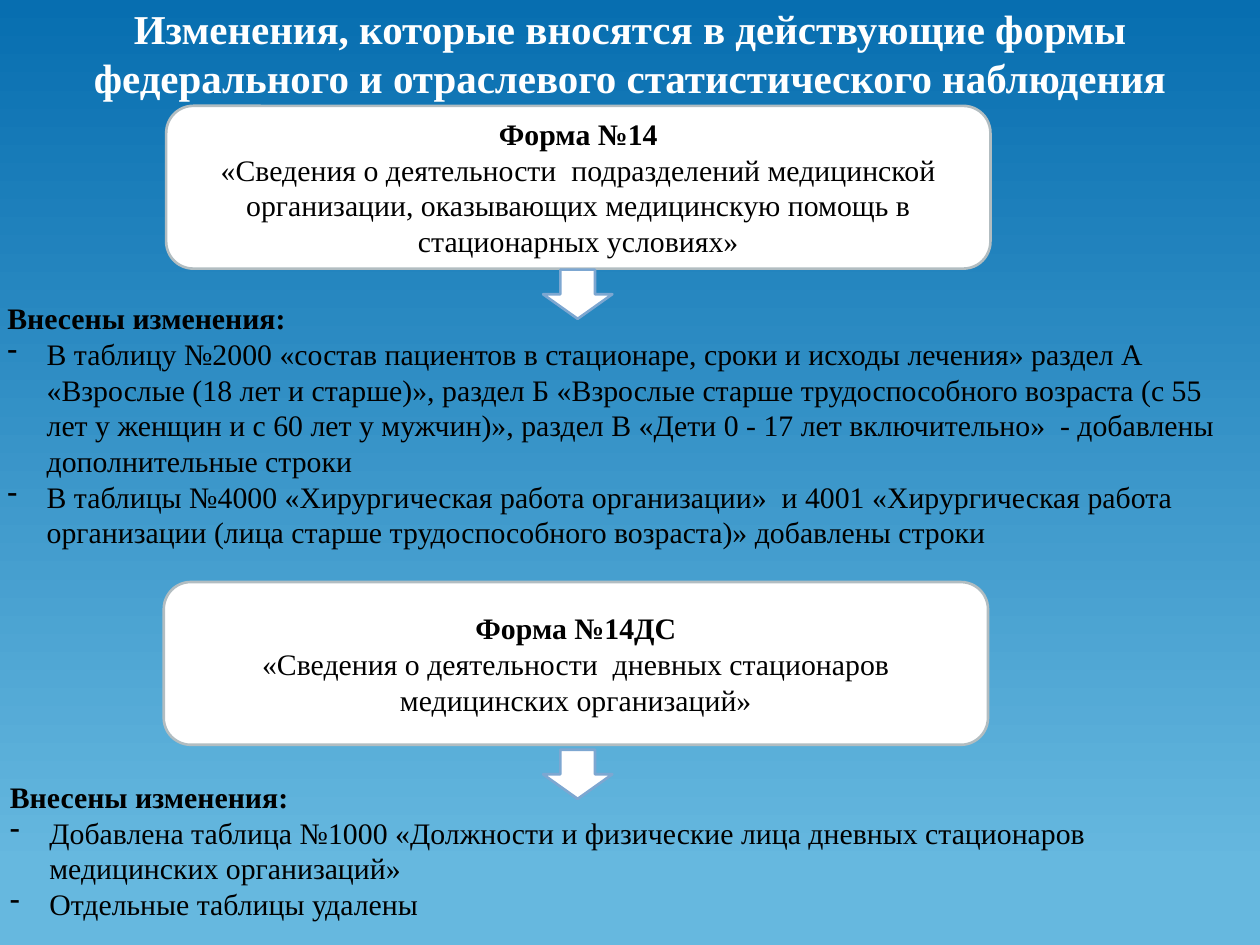
from lxml import etree
from pptx import Presentation
from pptx.dml.color import RGBColor
from pptx.enum.shapes import MSO_SHAPE
from pptx.enum.text import MSO_ANCHOR, PP_ALIGN
from pptx.oxml.ns import qn
from pptx.util import Pt

ROUNDED, DOWN_ARROW = MSO_SHAPE.ROUNDED_RECTANGLE, MSO_SHAPE.DOWN_ARROW
MIDDLE = MSO_ANCHOR.MIDDLE
CENTER, LEFT = PP_ALIGN.CENTER, PP_ALIGN.LEFT

WHITE = RGBColor(0xFF, 0xFF, 0xFF)
BLACK = RGBColor(0, 0, 0)
SKY_TOP = RGBColor(0x07, 0x6E, 0xB0)
SKY_BOTTOM = RGBColor(0x66, 0xB8, 0xDF)
BOX_EDGE = RGBColor(0xB2, 0xBD, 0xC1)
ARROW_EDGE = RGBColor(0x7D, 0xA7, 0xD1)

FONT = "Times New Roman"
TITLE_FORMAT = {"name": FONT, "size": Pt(23.4), "bold": True}
HEADING_FORMAT = {"name": FONT, "size": Pt(17), "bold": True}
BODY_FORMAT = {"name": FONT, "size": Pt(17), "bold": False}

BULLET_INDENT = Pt(22.5)

TITLE = ("Изменения, которые вносятся в действующие формы "
         "федерального и отраслевого статистического наблюдения")
CHANGES_HEADING = "Внесены изменения:"

# Each form: its box, the arrow below it and the list of changes
FORMS = [
    {
        "name": "Форма №14",
        "subject": "«Сведения о деятельности  подразделений медицинской организации, "
                   "оказывающих медицинскую помощь в стационарных условиях»",
        "box": (95, 60.5), "arrow_top": 154.1, "list": (-2.9, 167.8, 151.2),
        "changes": [
            "В таблицу №2000 «состав пациентов в стационаре, сроки и исходы лечения» "
            "раздел А «Взрослые (18 лет и старше)», раздел Б «Взрослые старше "
            "трудоспособного возраста (с 55 лет у женщин и с 60 лет у мужчин)», "
            "раздел В «Дети 0 - 17 лет включительно»  - добавлены дополнительные строки",
            "В таблицы №4000 «Хирургическая работа организации»  и 4001 «Хирургическая "
            "работа организации (лица старше трудоспособного возраста)» добавлены строки",
        ],
    },
    {
        "name": "Форма №14ДС",
        "subject": "«Сведения о деятельности  дневных стационаров медицинских организаций»",
        "box": (93.6, 332.6), "arrow_top": 428.4, "list": (-1.4, 441.4, 90),
        "changes": [
            "Добавлена таблица №1000 «Должности и физические лица дневных стационаров "
            "медицинских организаций»",
            "Отдельные таблицы удалены",
        ],
    },
]


def paint_background(slide):
    fill = slide.background.fill
    fill.gradient()
    fill.gradient_angle = 270
    for stop, color, position in zip(fill.gradient_stops, (SKY_TOP, SKY_BOTTOM), (0, 0.92)):
        stop.color.rgb = color
        stop.position = position


def add_dash(paragraph):
    properties = paragraph._p.get_or_add_pPr()
    properties.set("marL", str(BULLET_INDENT))
    properties.set("indent", str(-BULLET_INDENT))
    etree.SubElement(properties, qn("a:buChar")).set("char", "-")


def write_lines(frame, lines, align, color=BLACK):
    """Fill a text frame from (text, format, dashed) lines."""
    frame.word_wrap = True
    for index, (text, font_format, dashed) in enumerate(lines):
        paragraph = frame.add_paragraph() if index else frame.paragraphs[0]
        paragraph.alignment = align
        if dashed:
            add_dash(paragraph)
        run = paragraph.add_run()
        run.text = text
        for key, value in font_format.items():
            setattr(run.font, key, value)
        run.font.color.rgb = color


def add_text(slide, left, top, width, height, lines, align, color=BLACK):
    box = slide.shapes.add_textbox(Pt(left), Pt(top), Pt(width), Pt(height))
    write_lines(box.text_frame, lines, align, color)


def add_white_shape(slide, kind, left, top, width, height, edge):
    shape = slide.shapes.add_shape(kind, Pt(left), Pt(top), Pt(width), Pt(height))
    shape.shadow.inherit = False
    shape.fill.solid()
    shape.fill.fore_color.rgb = WHITE
    shape.line.color.rgb = edge
    shape.line.width = Pt(1.5)
    return shape


def add_form(slide, form):
    # Name and subject of the form
    box = add_white_shape(slide, ROUNDED, *form["box"], 471, 93, BOX_EDGE)
    box.text_frame.vertical_anchor = MIDDLE
    write_lines(box.text_frame, [(form["name"], HEADING_FORMAT, False),
                                 (form["subject"], BODY_FORMAT, False)], CENTER)

    # Arrow to the changes
    add_white_shape(slide, DOWN_ARROW, 310.3, form["arrow_top"], 39.6, 28.1, ARROW_EDGE)

    # Changes
    left, top, height = form["list"]
    lines = [(CHANGES_HEADING, HEADING_FORMAT, False)]
    lines += [(change, BODY_FORMAT, True) for change in form["changes"]]
    add_text(slide, left, top, 723, height, lines, LEFT)


def main():
    presentation = Presentation()
    presentation.slide_width, presentation.slide_height = Pt(720), Pt(540)
    slide = presentation.slides.add_slide(presentation.slide_layouts[6])
    paint_background(slide)
    # Title, raised a little so that its descenders clear the first box
    add_text(slide, 0, -1.5, 720, 54.7, [(TITLE, TITLE_FORMAT, False)], CENTER, WHITE)
    for form in FORMS:
        add_form(slide, form)
    presentation.save("out.pptx")


if __name__ == "__main__":
    main()
